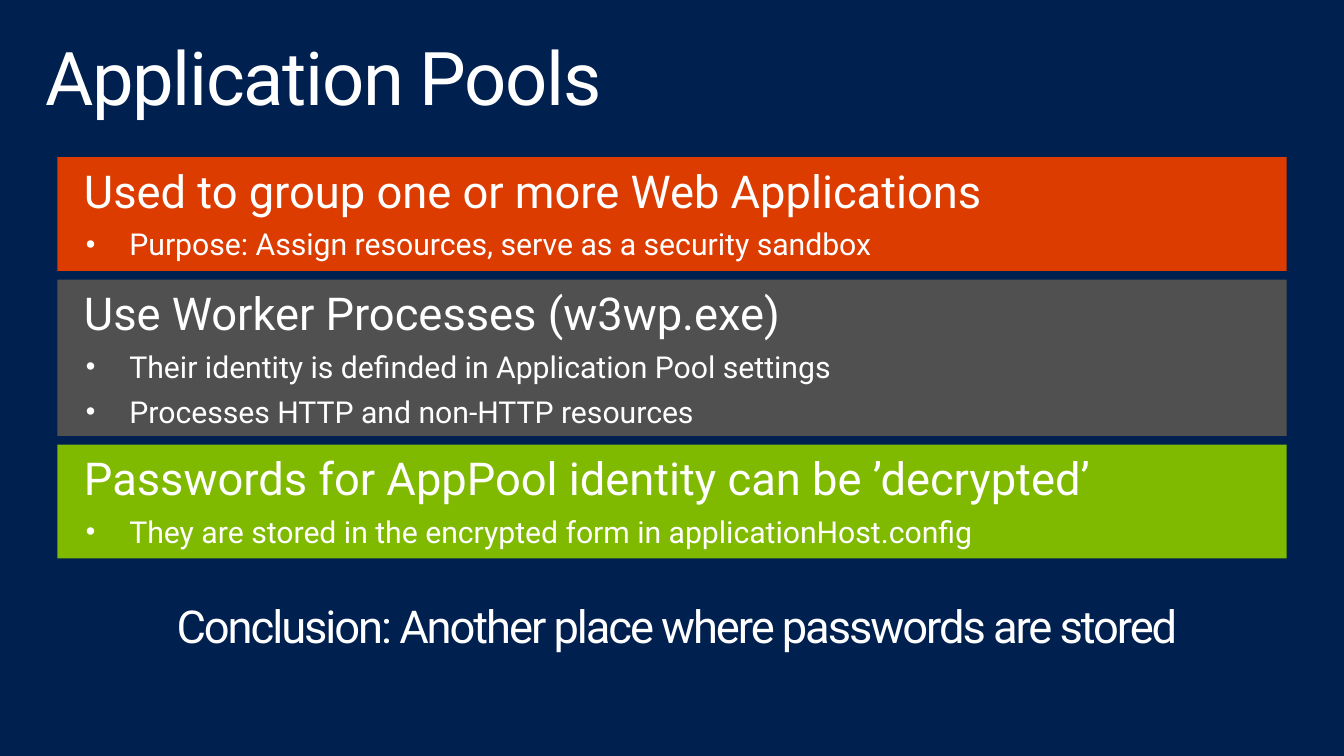
from dataclasses import dataclass

from lxml.etree import SubElement
from pptx import Presentation
from pptx.dml.color import RGBColor
from pptx.enum.shapes import MSO_SHAPE
from pptx.enum.text import MSO_ANCHOR, MSO_AUTO_SIZE, PP_ALIGN
from pptx.oxml.ns import qn
from pptx.util import Inches, Pt


@dataclass(frozen=True)
class Theme:
    font: str = "Roboto"
    navy: str = "002050"
    white: str = "FFFFFF"
    orange: str = "DC3C00"
    gray: str = "505050"
    green: str = "7FBA00"
    title: int = 54
    heading: int = 33
    detail: int = 22


theme = Theme()


def style(paragraph, size, tracking=0):
    font = paragraph.font
    font.name, font.size = theme.font, Pt(size)
    font.color.rgb = RGBColor.from_string(theme.white)
    if tracking:
        for run in paragraph.runs:
            run.font._element.set("spc", str(int(tracking * 100)))


def set_frame(frame, left, top, right, bottom):
    frame.margin_left, frame.margin_top = Inches(left), Inches(top)
    frame.margin_right, frame.margin_bottom = Inches(right), Inches(bottom)
    frame.word_wrap = True
    frame.vertical_anchor = MSO_ANCHOR.TOP


# Slide and background
deck = Presentation()
deck.slide_width, deck.slide_height = Inches(13.6), Inches(7.65)
slide = deck.slides.add_slide(deck.slide_layouts[5])
slide.background.fill.solid()
slide.background.fill.fore_color.rgb = RGBColor.from_string(theme.navy)

# Title
title = slide.shapes.title
title.left, title.top = Inches(0.3), Inches(0.32)
title.width, title.height = Inches(13), Inches(1)
set_frame(title.text_frame, 0.16, 0.1, 0.16, 0.1)
title.text_frame.auto_size = MSO_AUTO_SIZE.NONE
title.text_frame.text = "Application Pools"
heading = title.text_frame.paragraphs[0]
heading.alignment = PP_ALIGN.LEFT
heading.line_spacing = 0.9
style(heading, theme.title, -1)

# Coloured bands: colour, heading, details
bands = [
    (theme.orange, "Used to group one or more Web Applications",
     ["Purpose: Assign resources, serve as a security sandbox"]),
    (theme.gray, "Use Worker Processes (w3wp.exe)",
     ["Their identity is definded in Application Pool settings",
      "Processes HTTP and non-HTTP resources"]),
    (theme.green, "Passwords for AppPool identity can be ’decrypted’",
     ["They are stored in the encrypted form in applicationHost.config"]),
]
band_top, band_gap = 1.59, 0.09
text_left, text_width = Inches(0.65), Inches(12.3)

for color, topic, details in bands:
    band_height = 0.72 + 0.43 * len(details)
    group = slide.shapes.add_group_shape()
    band = group.shapes.add_shape(MSO_SHAPE.RECTANGLE, Inches(0.58), Inches(band_top),
                                  Inches(12.44), Inches(band_height))
    band.shadow.inherit = False
    band.fill.solid()
    band.fill.fore_color.rgb = RGBColor.from_string(color)
    band.line.fill.background()

    points = group.shapes.add_textbox(text_left, Inches(band_top + 0.01),
                                      text_width, Inches(band_height - 0.03))
    frame = points.text_frame
    set_frame(frame, 0.2, 0.05, 0.1, 0.05)
    frame.auto_size = MSO_AUTO_SIZE.SHAPE_TO_FIT_TEXT
    frame.text = topic
    frame.paragraphs[0].space_before = Pt(12.2)
    style(frame.paragraphs[0], theme.heading)

    for detail in details:
        point = frame.add_paragraph()
        point.text = detail
        point.level = 1
        point.space_before = Pt(6.1)
        style(point, theme.detail)
        # Bullet with hanging indent, placed ahead of the default run properties
        props = point._p.get_or_add_pPr()
        props.set("marL", str(Inches(0.46)))
        props.set("indent", str(Inches(-0.44)))
        defaults = props.find(qn("a:defRPr"))
        for tag, name, value in (("a:buSzPct", "val", "90000"),
                                 ("a:buFont", "typeface", "Arial"),
                                 ("a:buChar", "char", "•")):
            bullet = SubElement(props, qn(tag))
            bullet.set(name, value)
            defaults.addprevious(bullet)

    band_top += band_height + band_gap

# Conclusion
conclusion = slide.shapes.add_textbox(text_left, Inches(6), text_width, Inches(0.65))
set_frame(conclusion.text_frame, 0.2, 0.05, 0.1, 0.05)
conclusion.text_frame.auto_size = MSO_AUTO_SIZE.SHAPE_TO_FIT_TEXT
conclusion.text_frame.text = "Conclusion: Another place where passwords are stored"
closing = conclusion.text_frame.paragraphs[0]
closing.alignment = PP_ALIGN.CENTER
style(closing, theme.heading, -1.5)

deck.save("out.pptx")
